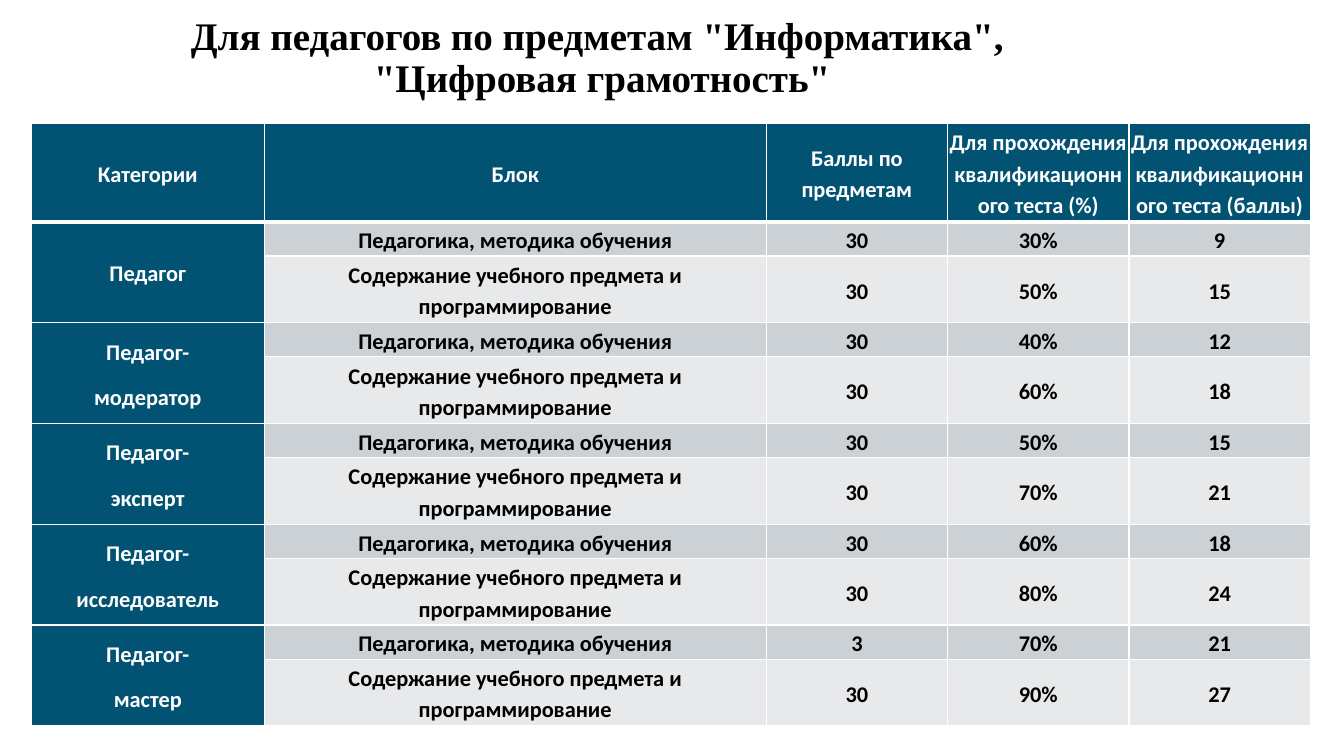
from pptx import Presentation
from pptx.dml.color import RGBColor as Rgb
from pptx.enum.text import MSO_ANCHOR as Anchor, PP_ALIGN as Align
from pptx.oxml import parse_xml as xml
from pptx.oxml.ns import nsdecls
from pptx.util import Cm, Pt

hues = {"head": "025373", "dark": "CCD1D5", "light": "E7E9EB",
        "white": "FFFFFF", "black": "000000"}


def write(para, text, font, size, hue):
    run = para.add_run()
    run.text = text
    run.font.name = font
    run.font.size = Pt(size)
    run.font.bold = True
    run.font.color.rgb = Rgb.from_string(hues[hue])


def fill_cell(cell, lines, back, ink, base=1):
    props = cell._tc.get_or_add_tcPr()
    for side, width in zip("LRTB", (1, 1, 1, base)):
        props.append(xml(
            f'<a:ln{side} {nsdecls("a")} w="{Pt(width)}"><a:solidFill>'
            f'<a:srgbClr val="{hues["white"]}"/></a:solidFill></a:ln{side}>'))
    cell.fill.solid()
    cell.fill.fore_color.rgb = Rgb.from_string(hues[back])
    cell.vertical_anchor = Anchor.MIDDLE
    cell.margin_left = cell.margin_right = Cm(0.02)
    cell.margin_top = cell.margin_bottom = Cm(0.02)
    frame = cell.text_frame
    for i, line in enumerate(lines):
        para = frame.add_paragraph() if i else frame.paragraphs[0]
        para.alignment = Align.CENTER
        para.line_spacing = 1.15
        para.space_after = Pt(10)
        write(para, line, "Calibri", 16, ink)


deck = Presentation()
deck.slide_width = Cm(33.87)
deck.slide_height = Cm(19.05)
slide = deck.slides.add_slide(deck.slide_layouts[6])

title = slide.shapes.add_textbox(Cm(0.81), Cm(0.43), Cm(28.73), Cm(2.11)).text_frame
title.word_wrap = True
title.margin_top = title.margin_bottom = 0
title.vertical_anchor = Anchor.MIDDLE
para = title.paragraphs[0]
para.alignment = Align.CENTER
para.line_spacing = 0.9
write(para, 'Для педагогов по предметам "Информатика", ', "Times New Roman", 27.9, "black")
para.add_line_break()
write(para, '"Цифровая грамотность"', "Times New Roman", 27.9, "black")

heads = ["Категории", "Блок", "Баллы по предметам",
         "Для прохождения квалификационного теста (%)",
         "Для прохождения квалификационного теста (баллы)"]
blocks = [("Педагогика, методика обучения", "dark"),
          ("Содержание учебного предмета и программирование", "light")]
ranks = [
    (["Педагог"], [("30", "30%", "9"), ("30", "50%", "15")]),
    (["Педагог-", "модератор"], [("30", "40%", "12"), ("30", "60%", "18")]),
    (["Педагог-", "эксперт"], [("30", "50%", "15"), ("30", "70%", "21")]),
    (["Педагог-", "исследователь"], [("30", "60%", "18"), ("30", "80%", "24")]),
    (["Педагог-", "мастер"], [("3", "70%", "21"), ("30", "90%", "27")]),
]
widths = [5.87, 12.65] + [4.57] * 3
heights = [2.49] + [0.86, 1.68] * len(ranks)

grid = slide.shapes.add_table(len(heights), len(widths), Cm(0.79), Cm(3.1),
                              Cm(sum(widths)), Cm(sum(heights))).table
for col, width in zip(grid.columns, widths):
    col.width = Cm(width)
for row, height in zip(grid.rows, heights):
    row.height = Cm(height)

for c, head in enumerate(heads):
    fill_cell(grid.cell(0, c), [head], "head", "white", 3)

for n, (rank, scores) in enumerate(ranks):
    top = 1 + 2 * n
    grid.cell(top, 0).merge(grid.cell(top + 1, 0))
    fill_cell(grid.cell(top, 0), rank, "head", "white")
    fill_cell(grid.cell(top + 1, 0), [], "head", "white")
    for r, ((block, back), score) in enumerate(zip(blocks, scores)):
        for c, text in enumerate((block, *score), 1):
            fill_cell(grid.cell(top + r, c), [text], back, "black")

deck.save("out.pptx")
